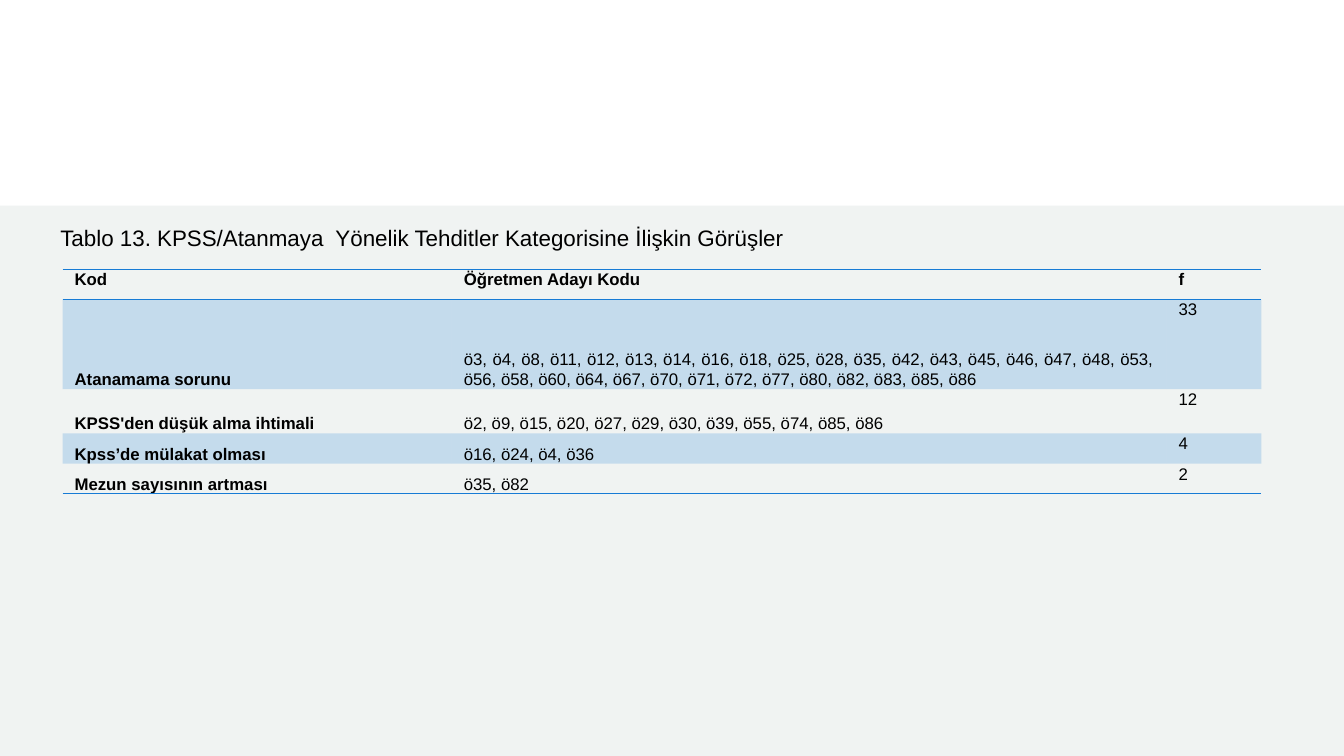
import pptx
import pptx.dml.color
import pptx.enum.shapes
import pptx.enum.text
import pptx.oxml
import pptx.oxml.ns
import pptx.util
from pptx.util import Inches

BLUE = "177BD5"
NO_STYLE_NO_GRID = "{2D5ABB26-0587-4C30-8999-92F81FD0307C}"
NAMESPACE = pptx.oxml.ns.nsdecls("a")


def color(hex_value):
    return pptx.dml.color.RGBColor.from_string(hex_value)


def format_font(font, **values):
    values = {"name": "Arial", **values}
    for name, value in values.items():
        setattr(font, name, value)
    font.color.rgb = color("000000")


presentation = pptx.Presentation()
presentation.slide_width = Inches(13.33)
presentation.slide_height = Inches(7.5)
slide = presentation.slides.add_slide(presentation.slide_layouts[6])

# Background panels
for top, height, fill in [(0, 7.5, "FFFFFF"), (2.04, 5.46, "F0F3F2")]:
    panel = slide.shapes.add_shape(
        pptx.enum.shapes.MSO_SHAPE.RECTANGLE,
        Inches(0), Inches(top), Inches(13.33), Inches(height))
    panel.shadow.inherit = False
    panel.fill.solid()
    panel.fill.fore_color.rgb = color(fill)
    panel.line.fill.background()

# Table of codes, teacher candidates and frequencies
rows = [
    ("Kod", "Öğretmen Adayı Kodu", "f"),
    ("Atanamama sorunu",
     "ö3, ö4, ö8, ö11, ö12, ö13, ö14, ö16, ö18, ö25, ö28, ö35, ö42, ö43, "
     "ö45, ö46, ö47, ö48, ö53, ö56, ö58, ö60, ö64, ö67, ö70, ö71, ö72, ö77, "
     "ö80, ö82, ö83, ö85, ö86", "33"),
    ("KPSS'den düşük alma ihtimali",
     "ö2, ö9, ö15, ö20, ö27, ö29, ö30, ö39, ö55, ö74, ö85, ö86", "12"),
    ("Kpss’de mülakat olması", "ö16, ö24, ö4, ö36", "4"),
    ("Mezun sayısının artması", "ö35, ö82", "2"),
]
column_widths = [3.86, 7.09, 0.94]
row_heights = [0.3, 0.89, 0.44, 0.3, 0.3]
row_borders = {0: ["lnT", "lnB"], len(rows) - 1: ["lnB"]}

frame = slide.shapes.add_table(
    len(rows), len(column_widths), Inches(0.62), Inches(2.67),
    Inches(sum(column_widths)), Inches(sum(row_heights)))
table = frame.table
table._tbl.tblPr.find(pptx.oxml.ns.qn("a:tableStyleId")).text = NO_STYLE_NO_GRID
for column, width in zip(table.columns, column_widths):
    column.width = Inches(width)
for row, height in zip(table.rows, row_heights):
    row.height = Inches(height)

cell_format = {
    "margin_left": Inches(0.12), "margin_right": Inches(0.12),
    "margin_top": 0, "margin_bottom": 0,
}
paragraph_format = {
    "alignment": pptx.enum.text.PP_ALIGN.JUSTIFY,
    "line_spacing": 1.07, "space_after": pptx.util.Pt(8),
}
for row_index, texts in enumerate(rows):
    for column_index, text in enumerate(texts):
        cell = table.cell(row_index, column_index)
        for name, value in cell_format.items():
            setattr(cell, name, value)
        at_bottom = row_index > 0 and column_index < 2
        cell.vertical_anchor = (pptx.enum.text.MSO_ANCHOR.BOTTOM if at_bottom
                                else pptx.enum.text.MSO_ANCHOR.TOP)
        paragraph = cell.text_frame.paragraphs[0]
        for name, value in paragraph_format.items():
            setattr(paragraph, name, value)
        run = paragraph.add_run()
        run.text = text
        format_font(run.font, size=pptx.util.Pt(12),
                    bold=row_index == 0 or column_index == 0)

        properties = cell._tc.get_or_add_tcPr()
        for side in row_borders.get(row_index, []):
            properties.append(pptx.oxml.parse_xml(
                f'<a:{side} {NAMESPACE} w="12700"><a:solidFill>'
                f'<a:srgbClr val="{BLUE}"/></a:solidFill></a:{side}>'))
        if row_index % 2:
            properties.append(pptx.oxml.parse_xml(
                f'<a:solidFill {NAMESPACE}><a:srgbClr val="{BLUE}">'
                '<a:alpha val="20000"/></a:srgbClr></a:solidFill>'))
        else:
            cell.fill.background()

# Table caption
caption = slide.shapes.add_textbox(
    Inches(0.5), Inches(2.17), Inches(8.72), Inches(0.37))
caption.text_frame.word_wrap = True
caption.text_frame.auto_size = pptx.enum.text.MSO_AUTO_SIZE.SHAPE_TO_FIT_TEXT
run = caption.text_frame.paragraphs[0].add_run()
run.text = "Tablo 13. KPSS/Atanmaya  Yönelik Tehditler Kategorisine İlişkin Görüşler"
format_font(run.font, size=pptx.util.Pt(16))

presentation.save("out.pptx")
